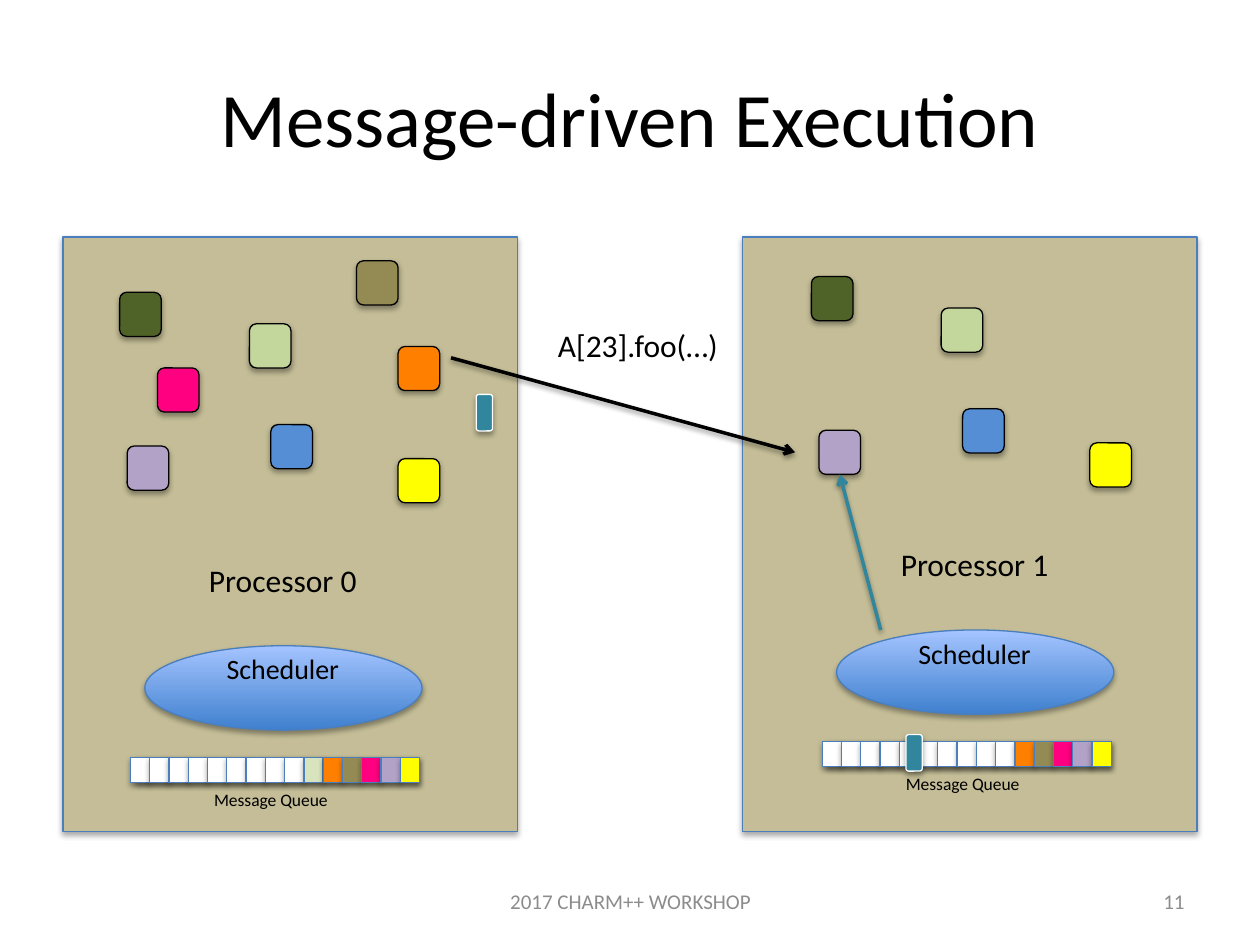
from lxml import etree
from pptx import Presentation
from pptx import util as u
from pptx.dml.color import RGBColor
from pptx.enum import shapes, text
from pptx.oxml.ns import qn

WIDTH, HEIGHT = u.Inches(10), u.Inches(7.5)
COLUMNS, ROWS = 100, 75

BLACK = RGBColor(0x00, 0x00, 0x00)
WHITE = RGBColor(0xFF, 0xFF, 0xFF)
GRAY = RGBColor(0x8C, 0x8C, 0x8C)
TAN = RGBColor(0xC4, 0xBD, 0x97)
BORDER = RGBColor(0x4B, 0x7E, 0xBC)
DARK_GREEN = RGBColor(0x4F, 0x62, 0x28)
LIGHT_GREEN = RGBColor(0xC3, 0xD6, 0x9B)
PALE_GREEN = RGBColor(0xD7, 0xE4, 0xBD)
PURPLE = RGBColor(0xB3, 0xA2, 0xC7)
BLUE = RGBColor(0x55, 0x8E, 0xD5)
YELLOW = RGBColor(0xFF, 0xFF, 0x00)
OLIVE = RGBColor(0x94, 0x8A, 0x54)
PINK = RGBColor(0xFF, 0x00, 0x80)
ORANGE = RGBColor(0xFF, 0x80, 0x00)
TEAL = RGBColor(0x31, 0x85, 0x9C)
DEEP_BLUE = RGBColor(0x3F, 0x80, 0xCE)
SKY_BLUE = RGBColor(0xA4, 0xC4, 0xFF)

RECT = shapes.MSO_SHAPE.RECTANGLE
ROUNDED = shapes.MSO_SHAPE.ROUNDED_RECTANGLE
OVAL = shapes.MSO_SHAPE.OVAL
CENTER = text.PP_ALIGN.CENTER

# Chare positions, in columns and rows from a processor's core
SHARED_CHARES = [
    (DARK_GREEN, 0, -20.8), (LIGHT_GREEN, 10.3, -18.3), (PURPLE, 0.6, -8.6),
    (BLUE, 12, -10.3), (YELLOW, 22.1, -7.6),
]
EXTRA_CHARES = [(OLIVE, 18.8, -23.3), (PINK, 3, -14.8), (ORANGE, 22.1, -16.5)]

QUEUE_SLOTS, SLOT_WIDTH = 15, 1.53
WAITING = [ORANGE, OLIVE, PINK, PURPLE, YELLOW]


def col(count):
    return round(WIDTH * count / COLUMNS)


def row(count):
    return round(HEIGHT * count / ROWS)


def grid_box(left, top, width, height):
    return col(left), row(top), col(width), row(height)


def add_shadow(effects, opacity, distance):
    """Put a soft downward shadow into an a:effectLst element."""
    shadow = etree.SubElement(
        effects, qn("a:outerShdw"), blurRad=str(u.Pt(3.1)),
        dist=str(u.Pt(distance)), dir="5400000", rotWithShape="0")
    color = etree.SubElement(shadow, qn("a:srgbClr"), val=str(BLACK))
    etree.SubElement(color, qn("a:alpha"), val=str(opacity * 1000))


def add_block(canvas, kind, place, fill, line):
    block = canvas.add_shape(kind, *grid_box(*place))
    block.fill.solid()
    block.fill.fore_color.rgb = fill
    block.line.color.rgb = line
    block.line.width = u.Pt(0.75)
    block.shadow.inherit = False
    add_shadow(block._element.spPr.find(qn("a:effectLst")), 35, 1.8)
    return block


def add_label(canvas, words, place, size, color=BLACK, align=CENTER,
              anchor=text.MSO_ANCHOR.TOP):
    frame = canvas.add_textbox(*grid_box(*place)).text_frame
    frame.word_wrap = True
    frame.vertical_anchor = anchor
    frame.text = words
    para = frame.paragraphs[0]
    para.alignment = align
    font = para.runs[0].font
    font.name, font.size, font.color.rgb = "Calibri", u.Pt(size), color


def add_arrow(canvas, start, end, color):
    arrow = canvas.add_connector(
        shapes.MSO_CONNECTOR.STRAIGHT,
        col(start[0]), row(start[1]), col(end[0]), row(end[1]))
    arrow.line.color.rgb = color
    arrow.line.width = u.Pt(2)
    properties = arrow._element.spPr
    etree.SubElement(properties.find(qn("a:ln")), qn("a:tailEnd"), type="arrow")
    add_shadow(etree.SubElement(properties, qn("a:effectLst")), 38, 1.6)
    return arrow


def add_scheduler(canvas, left, top):
    oval = add_block(canvas, OVAL, (left + 2, top, 22, 6.7), DEEP_BLUE, BORDER)
    oval.fill.gradient()
    oval.fill.gradient_angle = 90
    for stop, color in zip(oval.fill.gradient_stops, (DEEP_BLUE, SKY_BLUE)):
        stop.color.rgb = color
    for stop, position in zip(oval.fill.gradient_stops, (0, 1)):
        stop.position = position
    add_label(canvas, "Scheduler", (left + 0.6, top, 24.7, 5.3), 16)


def add_queue(canvas, left, top, waiting):
    """Draw the message queue, with waiting messages at its right end."""
    add_block(canvas, RECT, (left + 1.3, top, 22.5, 2), WHITE, BORDER)
    first = left + 23.8 - QUEUE_SLOTS * SLOT_WIDTH
    colors = [WHITE] * (QUEUE_SLOTS - len(waiting)) + waiting
    for index, color in enumerate(colors):
        place = (first + index * SLOT_WIDTH, top, SLOT_WIDTH, 2)
        add_block(canvas, RECT, place, color, BORDER)
    add_label(canvas, "Message Queue", (left + 0.3, top + 2, 23.4, 3.9), 10)


def add_processor(page, name, panel_left, core, chares, waiting):
    """Draw one processor and return its chares by colour."""
    canvas = page.shapes.add_group_shape().shapes
    left, top = core
    add_block(canvas, RECT, (panel_left, 18.8, 36.1, 47.2), TAN, BORDER)
    blocks = {
        color: add_block(canvas, ROUNDED, (left + x, top + y, 3.3, 3.5),
                         color, BLACK)
        for color, x, y in chares
    }
    add_label(canvas, name, (left + 0.6, top, 24.7, 5.8), 18)
    add_scheduler(canvas, left, top + 7.25)
    add_queue(canvas, left, top + 16.1, waiting)
    return blocks


def add_message(page, left, top):
    add_block(page.shapes, ROUNDED, (left, top, 1.3, 2.9), TEAL, WHITE)


def main():
    deck = Presentation()
    deck.slide_width, deck.slide_height = WIDTH, HEIGHT
    page = deck.slides.add_slide(deck.slide_layouts[6])
    canvas = page.shapes
    middle = text.MSO_ANCHOR.MIDDLE

    add_label(canvas, "Message-driven Execution", (5, 3, 90, 12.5), 44,
              anchor=middle)
    targets = add_processor(page, "Processor 1", 58.9, (64.4, 42.75),
                            SHARED_CHARES, WAITING)
    add_processor(page, "Processor 0", 5, (9.5, 44),
                  SHARED_CHARES + EXTRA_CHARES, [PALE_GREEN] + WAITING)

    add_message(page, 37.8, 31.3)
    add_arrow(canvas, (35.8, 28.4), (63.1, 35.9), BLACK)
    add_label(canvas, "A[23].foo(…)", (43.3, 25.4, 15, 4.2), 18,
              align=text.PP_ALIGN.LEFT)
    delivery = add_arrow(canvas, (69.9, 50), (66.8, 37.7), TEAL)
    delivery.end_connect(targets[PURPLE], 2)
    add_message(page, 71.9, 58.3)

    add_label(canvas, "11", (71.7, 69.5, 23.3, 4), 12, GRAY,
              text.PP_ALIGN.RIGHT, middle)
    add_label(canvas, "2017 CHARM++ WORKSHOP", (34.2, 69.5, 31.7, 4), 12, GRAY,
              anchor=middle)
    deck.save("out.pptx")


if __name__ == "__main__":
    main()
